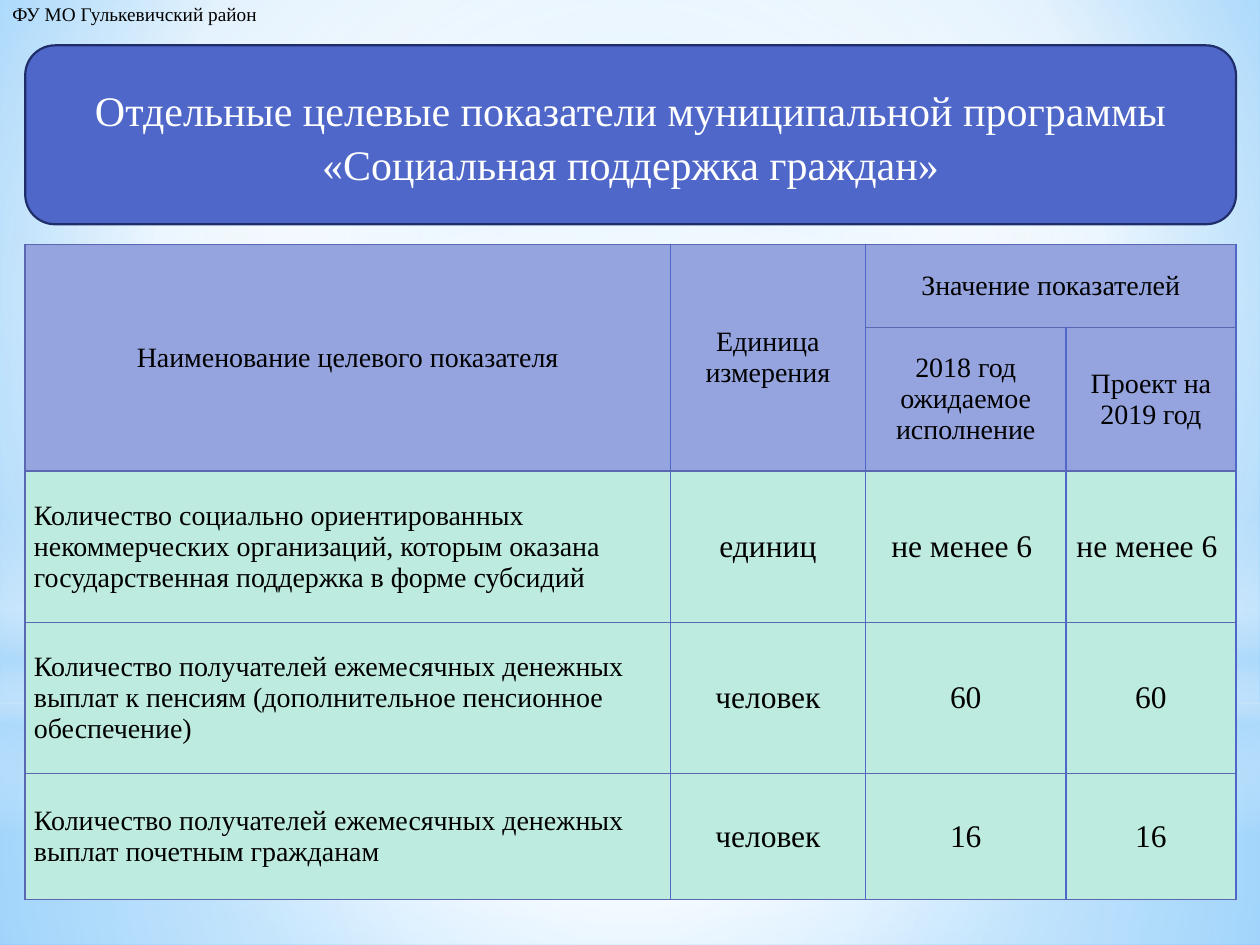
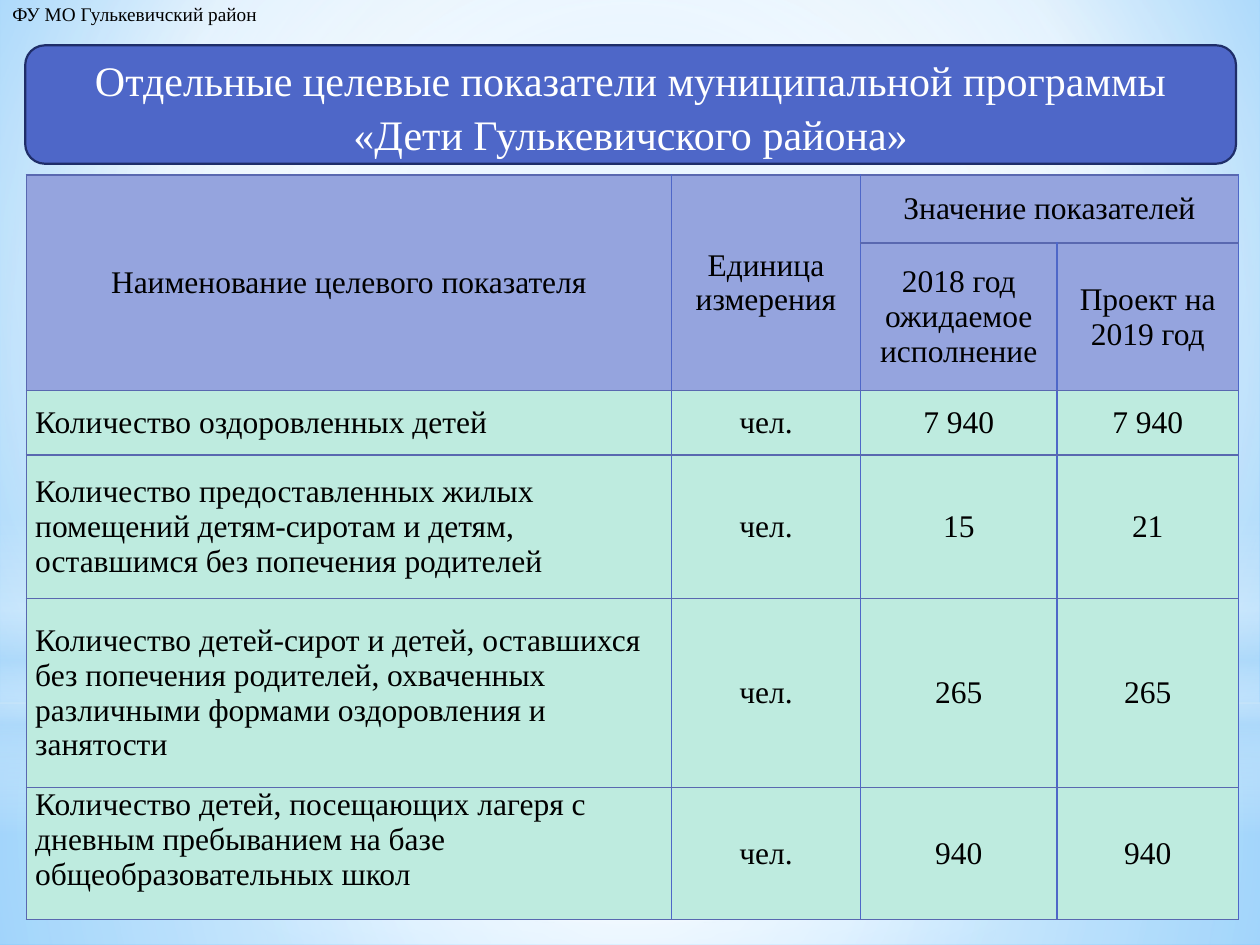
from pptx import Presentation
from pptx.dml.color import RGBColor
from pptx.enum.shapes import MSO_SHAPE as Shape
from pptx.enum.text import MSO_ANCHOR as Anchor, MSO_AUTO_SIZE as Fit, PP_ALIGN as Align
from pptx.oxml import parse_xml
from pptx.oxml.ns import nsdecls, qn
from pptx.util import Inches, Pt

# Shared look
FONT = "Times New Roman"
BLACK, WHITE, SKY = "000000", "FFFFFF", "B4DCFA"
BLUE, NAVY, EDGE = "4E67C8", "1F2E69", "5968B0"
HEAD, BODY = "95A4DE", "BEEBDF"
LEFT, WIDTH = 0.2, 9.61
CENTER = (50, 50, 50, 50)


def color(code):
    return RGBColor.from_string(code)


def write(frame, lines, size, code=BLACK, align=Align.LEFT):
    for i, line in enumerate(lines):
        para = frame.paragraphs[0] if i == 0 else frame.add_paragraph()
        para.alignment = align
        run = para.add_run()
        run.text = line
        run.font.name, run.font.size = FONT, Pt(size)
        run.font.color.rgb = color(code)


def blend(fill, props, stops, focus=None):
    """Fill with a gradient: circular around focus, else top to bottom."""
    marks = "".join(
        f'<a:gs pos="{pos * 1000}"><a:srgbClr val="{code}">'
        f'<a:alpha val="{alpha * 1000}"/></a:srgbClr></a:gs>'
        for pos, code, alpha in stops)
    if focus:
        sides = " ".join(f'{s}="{v * 1000}"' for s, v in zip("ltrb", focus))
        way = f'<a:path path="circle"><a:fillToRect {sides}/></a:path>'
    else:
        way = '<a:lin ang="5400000" scaled="0"/>'
    fill.background()
    props.replace(props.find(qn("a:noFill")), parse_xml(
        f'<a:gradFill {nsdecls("a")} rotWithShape="1">'
        f'<a:gsLst>{marks}</a:gsLst>{way}</a:gradFill>'))


# Sky on the master: backdrop and four glows
GLOWS = [
    (Shape.RECTANGLE, 5.58, 1.92, CENTER,
     [(0, WHITE, 91), (37, WHITE, 76), (100, SKY, 79)]),
    (Shape.RECTANGLE, 0, 5.58, CENTER,
     [(0, WHITE, 89), (48, WHITE, 62), (100, SKY, 79)]),
    (Shape.RECTANGLE, 4.12, 2.5, None,
     [(0, WHITE, 0), (29, WHITE, 30), (45, SKY, 40),
      (55, WHITE, 26), (65, SKY, 60), (100, WHITE, 0)]),
    (Shape.OVAL, 1.75, 5.58, CENTER, [(0, WHITE, 100), (56, WHITE, 0)]),
]


def add_sky(master, slide):
    """Shapes are made on the slide, then moved beneath the master's own."""
    back = master.background.fill
    blend(back, next(master.element.iter(qn("p:bgPr"))),
          [(0, "9ED5FF", 100), (60, WHITE, 100), (100, "5BB9FF", 100)],
          (20, 10, 20, 60))
    first = master.shapes[0].element
    for i, (kind, top, height, focus, stops) in enumerate(GLOWS):
        glow = slide.shapes.add_shape(
            kind, 0, Inches(top), Inches(10), Inches(height))
        glow.shadow.inherit = False
        glow.line.fill.background()
        blend(glow.fill, glow.element.spPr, stops, focus)
        glow.element.nvSpPr.cNvPr.set("id", str(20 + i))
        first.addprevious(glow.element)


def add_label(slide):
    box = slide.shapes.add_textbox(0, Inches(-0.03), Inches(2.18), Inches(0.29))
    box.text_frame.word_wrap = False
    box.text_frame.auto_size = Fit.SHAPE_TO_FIT_TEXT
    write(box.text_frame, ["ФУ МО Гулькевичский район"], 11)


def add_title(slide, name, height):
    box = [Inches(v) for v in (LEFT, 0.36, WIDTH, height)]
    band = slide.shapes.add_shape(Shape.ROUNDED_RECTANGLE, *box)
    band.shadow.inherit = False
    band.fill.solid()
    band.fill.fore_color.rgb = color(BLUE)
    band.line.color.rgb = color(NAVY)
    band.line.width = Pt(1.25)
    # Title text lies over the band
    title = slide.shapes.title
    title.left, title.top, title.width, title.height = box
    band.element.addnext(title.element)
    frame = title.text_frame
    frame.auto_size, frame.word_wrap = Fit.NONE, True
    frame.vertical_anchor = Anchor.MIDDLE
    write(frame, [f"Отдельные целевые показатели муниципальной программы «{name}»"],
          24, WHITE, Align.CENTER)
    frame.paragraphs[0].line_spacing = 1.07


def style(cell, fill, outer):
    cell.fill.solid()
    cell.fill.fore_color.rgb = color(fill)
    cell.vertical_anchor = Anchor.MIDDLE
    props = cell._tc.get_or_add_tcPr()
    codes = {"L": EDGE if outer else BLUE, "R": BLUE, "T": EDGE, "B": EDGE}
    for i, (side, code) in enumerate(codes.items()):
        props.insert(i, parse_xml(
            f'<a:ln{side} {nsdecls("a")} w="12700"><a:solidFill>'
            f'<a:srgbClr val="{code}"/></a:solidFill></a:ln{side}>'))


HEADS = {
    (0, 0): ["Наименование целевого показателя"],
    (0, 1): ["Единица", "измерения"],
    (0, 2): ["Значение показателей"],
    (1, 2): ["2018 год ожидаемое исполнение"],
    (1, 3): ["Проект на 2019 год"],
}


def add_grid(slide, left, top, cols, rows, data, size):
    grid = slide.shapes.add_table(
        len(rows), len(cols), Inches(left), Inches(top),
        Inches(sum(cols)), Inches(sum(rows))).table
    grid.first_row = grid.horz_banding = False
    for col, width in zip(grid.columns, cols):
        col.width = Inches(width)
    for row, height in zip(grid.rows, rows):
        row.height = Inches(height)
    for r in range(len(rows)):
        for c in range(len(cols)):
            style(grid.cell(r, c), HEAD if r < 2 else BODY, c == 0)
    # Header
    for c in (0, 1):
        grid.cell(0, c).merge(grid.cell(1, c))
    grid.cell(0, 2).merge(grid.cell(0, 3))
    for (r, c), lines in HEADS.items():
        write(grid.cell(r, c).text_frame, lines, size, align=Align.CENTER)
    # Body: names to the left, values centred
    for r, (name, *values) in enumerate(data, 2):
        for c, text in enumerate([name, *values]):
            cell = grid.cell(r, c)
            cell.margin_left = cell.margin_right = Inches(0.07)
            cell.margin_top = cell.margin_bottom = 0
            if c == 0:
                write(cell.text_frame, text.split("\n"), size)
            else:
                write(cell.text_frame, [text], 18, align=Align.CENTER)
    return grid


SOCIAL = [
    ("Количество социально ориентированных некоммерческих организаций, "
     "которым оказана\nгосударственная поддержка в форме субсидий",
     "единиц", "не менее 6 ", "не менее 6 "),
    ("Количество получателей ежемесячных денежных выплат к пенсиям "
     "(дополнительное пенсионное обеспечение)", "человек", "60", "60"),
    ("Количество получателей ежемесячных денежных выплат почетным гражданам",
     "человек", "16", "16"),
]
KIDS = [
    ("Количество оздоровленных детей", "чел.", "7 940", "7 940"),
    ("Количество предоставленных жилых помещений детям-сиротам и детям, "
     "оставшимся без попечения родителей", "чел.", "15", "21"),
    ("Количество детей-сирот и детей, оставшихся без попечения родителей, "
     "охваченных различными формами оздоровления и занятости",
     "чел.", "265", "265"),
    ("Количество детей, посещающих лагеря с дневным пребыванием на базе "
     "общеобразовательных школ", "чел.", "940", "940"),
]


def add_page(deck, name, height, *table):
    slide = deck.slides.add_slide(deck.slide_layouts[5])
    add_label(slide)
    grid = add_grid(slide, *table)
    add_title(slide, name, height)
    return slide, grid


def main():
    deck = Presentation()
    deck.slide_width, deck.slide_height = Inches(10), Inches(7.5)
    slide, _ = add_page(
        deck, "Социальная поддержка граждан", 1.42, LEFT, 1.94,
        [5.12, 1.55, 1.59, 1.35], [0.66, 1.14, 1.2, 1.2, 1], SOCIAL, 16)
    add_sky(deck.slide_master, slide)
    _, grid = add_page(
        deck, "Дети Гулькевичского района", 0.94, 0.21, 1.39,
        [5.12, 1.5, 1.56, 1.44], [0.54, 1.17, 0.51, 1.14, 1.5, 1.05], KIDS, 18)
    grid.cell(5, 0).vertical_anchor = Anchor.TOP
    deck.save("out.pptx")


if __name__ == "__main__":
    main()
